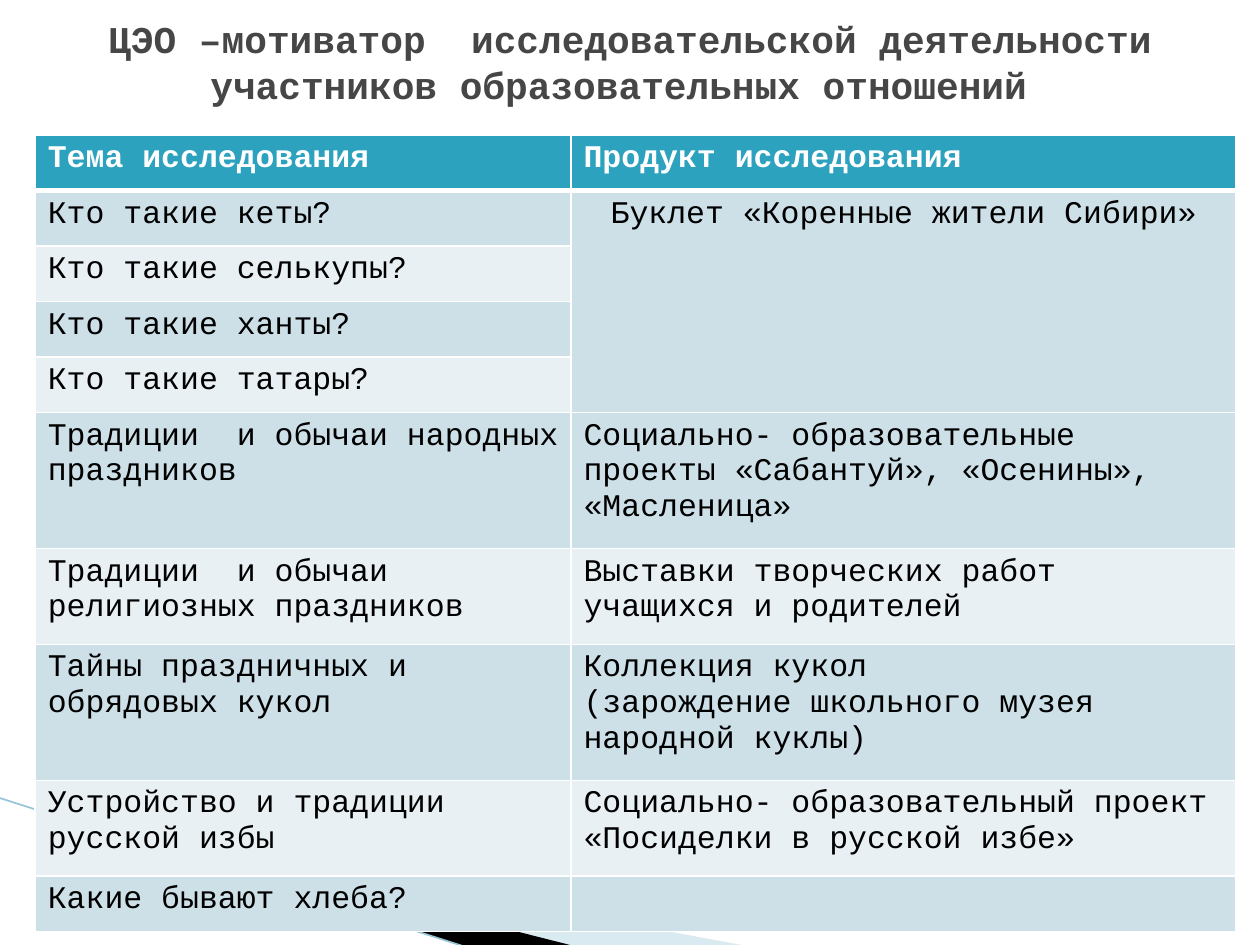
from lxml.etree import SubElement as Sub
from pptx import Presentation
from pptx.dml.color import RGBColor as Rgb
from pptx.enum.text import MSO_ANCHOR as Anchor, PP_ALIGN as Align
from pptx.oxml.ns import qn
from pptx.util import Cm, Pt

HUES = {"head": "2DA2BF", "odd": "CDE0E8", "even": "E8F0F4", "rule": "FFFFFF",
        "title": "464646", "text": "000000", "wing": "A0CBDC", "dark": "000000",
        "line": "97C5D8"}
TITLE = "ЦЭО –мотиватор  исследовательской деятельности участников образовательных отношений "
ROWS = [
    ("Тема исследования", "Продукт исследования", 1.12),
    ("Кто такие кеты?", "Буклет «Коренные жители Сибири»", 1.12),
    ("Кто такие селькупы?", "", 1.12),
    ("Кто такие ханты?", "", 1.12),
    ("Кто такие татары?", "", 1.12),
    ("Традиции  и обычаи народных праздников",
     "Социально- образовательные проекты «Сабантуй», «Осенины», «Масленица»", 2.74),
    ("Традиции  и обычаи религиозных праздников",
     "Выставки творческих работ учащихся и родителей", 1.93),
    ("Тайны праздничных и обрядовых кукол",
     "Коллекция кукол\n(зарождение школьного музея народной куклы)", 2.74),
    ("Устройство и традиции русской избы",
     "Социально- образовательный проект «Посиделки в русской избе»", 1.93),
    ("Какие бывают хлеба?", "", 1.12),
]


def hue(key):
    """Return the named colour."""
    return Rgb.from_string(HUES[key])


def style(frame, size, key, bold=False, align=None):
    """Format every paragraph of a text frame."""
    form = {"name": "Courier New", "size": Pt(size), "bold": bold}
    for para in frame.paragraphs:
        para.alignment = align
        for run in para.runs:
            for name, value in form.items():
                setattr(run.font, name, value)
            run.font.color.rgb = hue(key)


def wing(slide, left, top, points, key, alpha=100):
    """Draw a filled outline with points relative to its corner."""
    path = [(Cm(left + x), Cm(top + y)) for x, y in points]
    pen = slide.shapes.build_freeform(*path[0])
    pen.add_line_segments(path[1:])
    shape = pen.convert_to_shape()
    shape.shadow.inherit = False
    shape.fill.solid()
    shape.fill.fore_color.rgb = hue(key)
    shape.line.fill.background()
    if alpha < 100:
        tint = shape._element.spPr.find(".//" + qn("a:srgbClr"))
        Sub(tint, qn("a:alpha"), val=str(alpha * 1000))


def decor(slide, left, top):
    """Draw the corner wings and the slanted line."""
    wing(slide, left + 1.4, top + 0.43,
         [(0, 0.03), (13.71, 2.57), (10.18, 2.57), (0, 0)], "wing", 40)
    wing(slide, left + 1.35, top + 0.4,
         [(0, 0), (10.26, 2.6), (8.1, 2.62), (0.02, 0.03)], "dark")
    line = slide.shapes.add_connector(
        1, Cm(left - 0.03), Cm(top), Cm(left + 9.42), Cm(top + 3.02))
    line.line.color.rgb = hue("line")
    line.line.width = Pt(0.95)
    Sub(line._element.spPr, qn("a:effectLst"))


def title(slide, left, top, width, height):
    """Place the centred slide title."""
    box = slide.shapes.add_textbox(Cm(left), Cm(top), Cm(width), Cm(height))
    frame = box.text_frame
    frame.word_wrap = True
    frame.vertical_anchor = Anchor.MIDDLE
    frame.text = TITLE
    style(frame, 21.6, "title", True, Align.CENTER)


def edge(cell, row):
    """Rule all four sides of a cell, thicker under the header."""
    props = cell._tc.get_or_add_tcPr()
    for side in "LRTB":
        thick = (row, side) in ((0, "B"), (1, "T"))
        rule = Sub(props, qn("a:ln" + side), w=str(Pt(3 if thick else 1)))
        Sub(Sub(rule, qn("a:solidFill")), qn("a:srgbClr"), val=HUES["rule"])


def grid(slide, left, top, widths):
    """Place the table of themes and products."""
    high = sum(row[-1] for row in ROWS)
    table = slide.shapes.add_table(len(ROWS), len(widths), Cm(left), Cm(top),
                                   Cm(sum(widths)), Cm(high)).table
    for col, width in zip(table.columns, widths):
        col.width = Cm(width)
    for r, (*texts, height) in enumerate(ROWS):
        table.rows[r].height = Cm(height)
        band = "head" if r == 0 else "even" if r in (2, 4, 6, 8) else "odd"
        for c, text in enumerate(texts):
            cell = table.cell(r, c)
            edge(cell, r)
            cell.fill.solid()
            merged = c == 1 and 1 <= r <= 4
            cell.fill.fore_color.rgb = hue("odd" if merged else band)
            cell.text = text
            style(cell.text_frame, 18, "text" if r else "rule", r == 0,
                  Align.CENTER if merged else None)
    table.cell(1, 1).merge(table.cell(4, 1))


def main():
    """Build and save the slide."""
    deck = Presentation()
    deck.slide_width, deck.slide_height = Cm(25.4), Cm(19.05)
    slide = deck.slides.add_slide(deck.slide_layouts[6])
    decor(slide, 0, 16.08)
    title(slide, 1.27, 0.13, 22.86, 2.21)
    grid(slide, 0.71, 2.72, (10.8, 13.41))
    deck.save("out.pptx")


if __name__ == "__main__":
    main()
